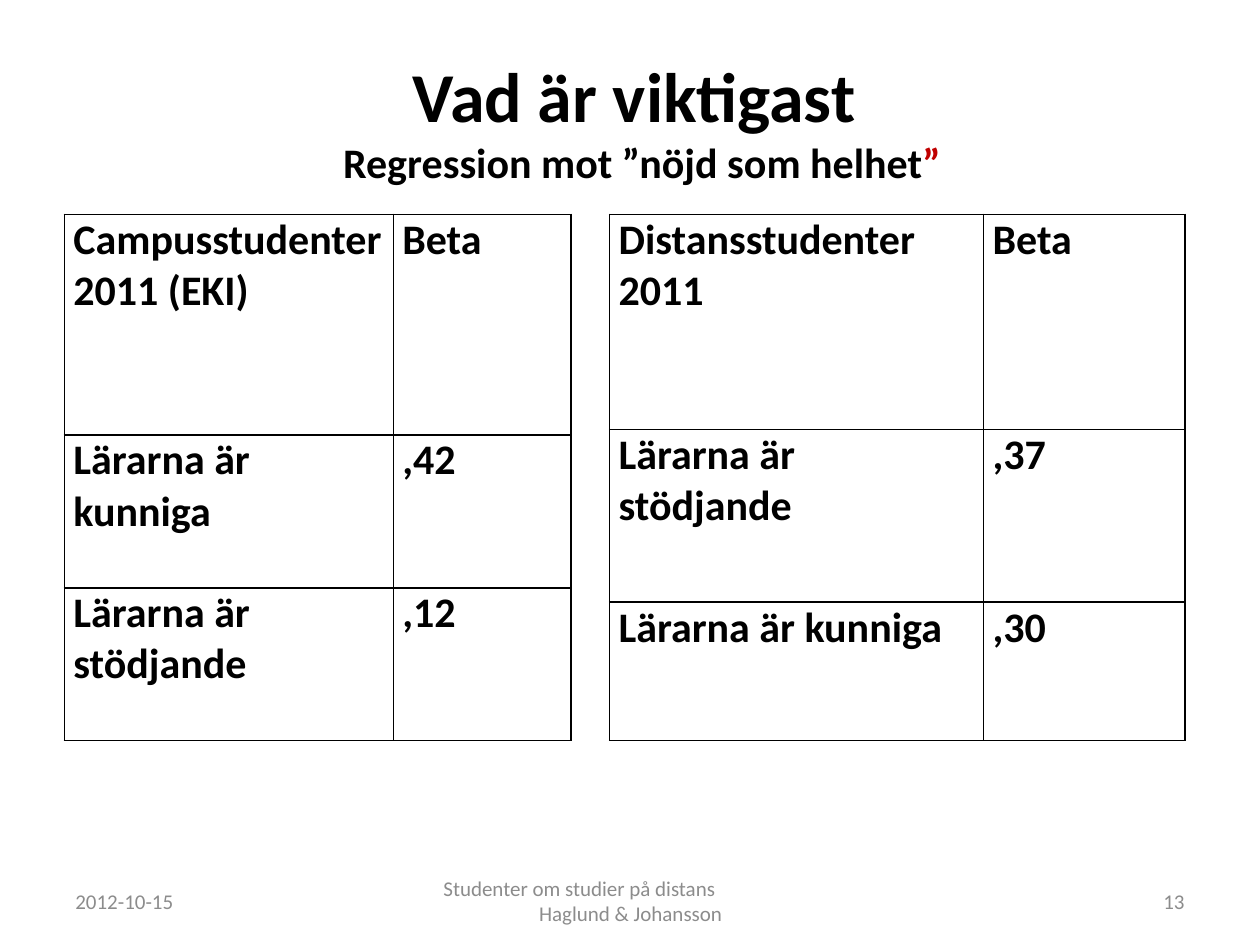
from lxml import etree
from pptx import Presentation
from pptx.dml.color import RGBColor
from pptx.enum.text import MSO_ANCHOR, PP_ALIGN
from pptx.oxml.ns import qn
from pptx.util import Cm, Pt

LEFT, CENTER, RIGHT = PP_ALIGN.LEFT, PP_ALIGN.CENTER, PP_ALIGN.RIGHT
MIDDLE = MSO_ANCHOR.MIDDLE
BLANK_LAYOUT = 6

BLACK, RED, GREY = "000000", "C00000", "8C8C8C"
TABLE_TOP = 4.32
FOOTER_TOP, FOOTER_HEIGHT = 17.65, 1.02


def color(hex_code):
    return RGBColor.from_string(hex_code)


class SlideBuilder:
    font_name = "Calibri"
    table_size = 24
    footer_size = 12
    cell_margin = 0.18
    border_width = 1

    def __init__(self, slide):
        self.slide = slide

    def run(self, paragraph, text, size, hex_code=BLACK, bold=False):
        run = paragraph.add_run()
        run.text = text
        run.font.name = self.font_name
        run.font.size = Pt(size)
        run.font.bold = bold
        run.font.color.rgb = color(hex_code)

    def text_box(self, left, top, width, height, paragraphs):
        """Each paragraph is an alignment and a list of run arguments."""
        shape = self.slide.shapes.add_textbox(Cm(left), Cm(top), Cm(width), Cm(height))
        frame = shape.text_frame
        frame.word_wrap = True
        frame.vertical_anchor = MIDDLE
        for index, (alignment, runs) in enumerate(paragraphs):
            paragraph = frame.add_paragraph() if index else frame.paragraphs[0]
            paragraph.alignment = alignment
            for arguments in runs:
                self.run(paragraph, *arguments)

    def footer(self, left, width, *lines):
        paragraphs = [(alignment, [(text, self.footer_size, GREY)]) for alignment, text in lines]
        self.text_box(left, FOOTER_TOP, width, FOOTER_HEIGHT, paragraphs)

    def cell_borders(self, cell):
        properties = cell._tc.get_or_add_tcPr()
        for side in ("a:lnL", "a:lnR", "a:lnT", "a:lnB"):
            line = etree.SubElement(properties, qn(side), w=str(Pt(self.border_width)))
            fill = etree.SubElement(line, qn("a:solidFill"))
            etree.SubElement(fill, qn("a:srgbClr"), val=BLACK)

    def table(self, left, column_widths, row_heights, rows):
        shape = self.slide.shapes.add_table(
            len(rows), len(column_widths), Cm(left), Cm(TABLE_TOP),
            Cm(sum(column_widths)), Cm(sum(row_heights)))
        table = shape.table
        table.first_row = table.horz_banding = False
        for column, width in zip(table.columns, column_widths):
            column.width = Cm(width)
        for row, height, texts in zip(table.rows, row_heights, rows):
            row.height = Cm(height)
            for cell, text in zip(row.cells, texts):
                cell.margin_left = cell.margin_right = Cm(self.cell_margin)
                cell.margin_top = cell.margin_bottom = 0
                self.cell_borders(cell)
                cell.fill.background()
                self.run(cell.text_frame.paragraphs[0], text, self.table_size, bold=True)


def main():
    presentation = Presentation()
    presentation.slide_width, presentation.slide_height = Cm(25.4), Cm(19.05)
    slide = presentation.slides.add_slide(presentation.slide_layouts[BLANK_LAYOUT])
    builder = SlideBuilder(slide)

    builder.text_box(5.89, 0.91, 14.1, 3, [
        (CENTER, [("Vad är viktigast ", 40, BLACK, True)]),
        (CENTER, [("Regression mot ”nöjd som helhet", 24, BLACK, True),
                  ("”", 24, RED, True)]),
    ])

    builder.table(12.29, [7.54, 4.06], [4.34, 3.48, 2.79], [
        ("Distansstudenter 2011", "Beta"),
        ("Lärarna är stödjande", ",37"),
        ("Lärarna är kunniga", ",30"),
    ])
    builder.table(1.3, [6.63, 3.58], [4.45, 3.08, 3.08], [
        ("Campusstudenter 2011 (EKI)", "Beta"),
        ("Lärarna är kunniga", ",42"),
        ("Lärarna är stödjande", ",12"),
    ])

    builder.footer(1.27, 5.92, (LEFT, "2012-10-15"))
    builder.footer(8.69, 8.05, (LEFT, "Studenter om studier på distans"),
                   (CENTER, "Haglund & Johansson"))
    builder.footer(18.21, 5.92, (RIGHT, "13"))

    presentation.save("out.pptx")


if __name__ == "__main__":
    main()
